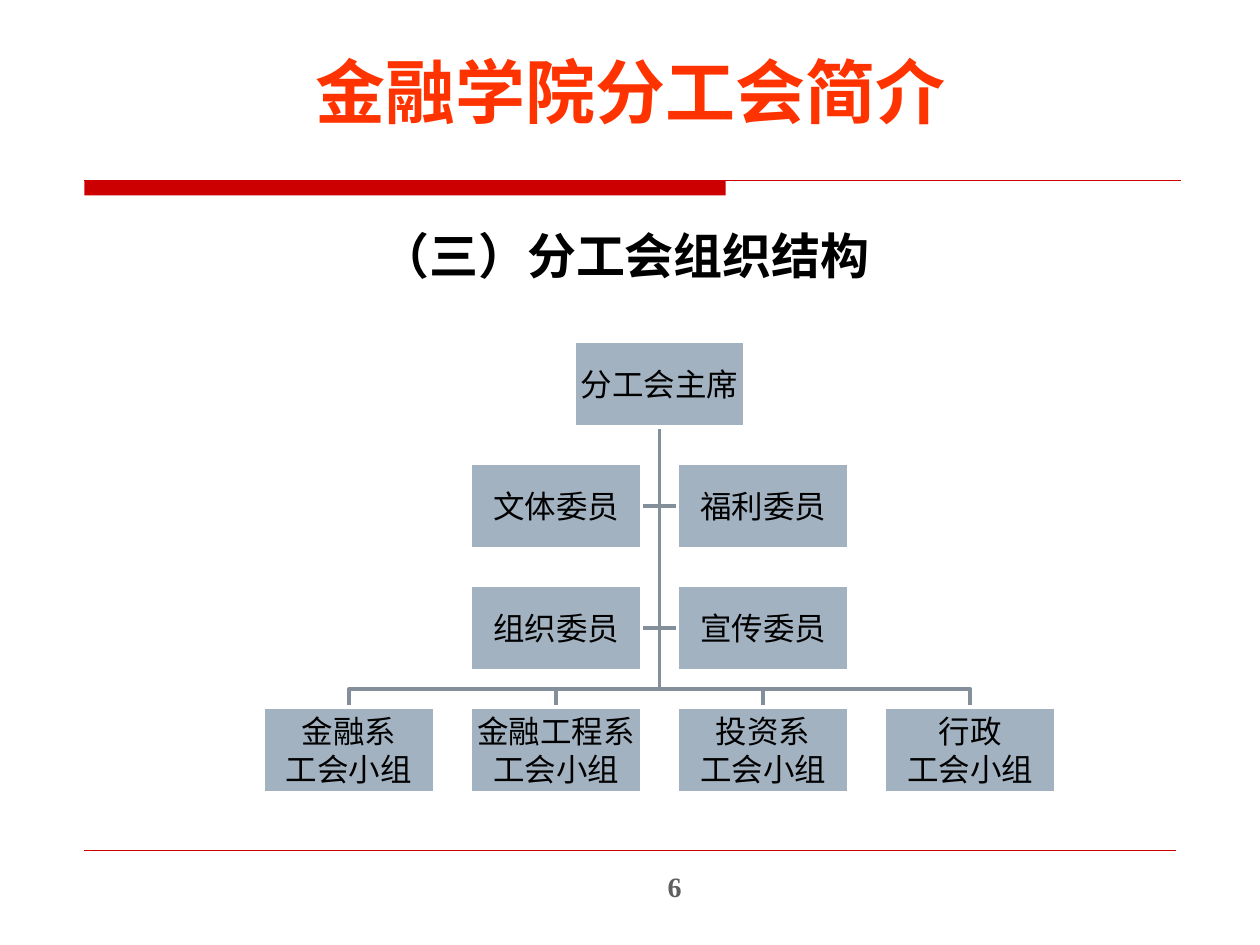
from lxml.etree import SubElement
from pptx import Presentation
from pptx.dml.color import RGBColor
from pptx.enum.shapes import MSO_CONNECTOR as Link, MSO_SHAPE as Shape
from pptx.enum.text import MSO_ANCHOR as Anchor, MSO_AUTO_SIZE as Fit, PP_ALIGN as Align
from pptx.oxml.ns import qn
from pptx.util import Inches, Pt

COLORS = {
    "title": "FF3300", "text": "000000", "accent": "CC0000",
    "node": "A3B2C1", "edge": "FFFFFF", "link": "838F9B", "number": "5F5F5F",
}
COMMITTEE = [["文体委员", "福利委员"], ["组织委员", "宣传委员"]]
GROUPS = ["金融系", "金融工程系", "投资系", "行政"]


def color(name):
    return RGBColor.from_string(COLORS[name])


def place(shape, box):
    for side, value in zip(("left", "top", "width", "height"), box):
        setattr(shape, side, Inches(value))


def write(shape, lines, size, font, ink, bold=False, margins=(0.1, 0.05), anchor=Anchor.MIDDLE):
    frame = shape.text_frame
    across, down = (Inches(margin) for margin in margins)
    frame_format = {
        "word_wrap": True, "auto_size": Fit.NONE, "vertical_anchor": anchor,
        "margin_left": across, "margin_right": across,
        "margin_top": down, "margin_bottom": down,
    }
    for name, value in frame_format.items():
        setattr(frame, name, value)
    for index, line in enumerate(lines):
        para = frame.add_paragraph() if index else frame.paragraphs[0]
        para.alignment = Align.CENTER
        para.space_before = Pt(0)
        span = para.add_run()
        span.text = line
        span.font.color.rgb = color(ink)
        for name, value in {"size": Pt(size), "name": font, "bold": bold}.items():
            setattr(span.font, name, value)
        SubElement(span.font._element, qn("a:ea")).set("typeface", font)


def add_line(page, start, end, ink, weight):
    line = page.shapes.add_connector(Link.STRAIGHT, *(Inches(value) for value in (*start, *end)))
    line.line.color.rgb = color(ink)
    line.line.width = Pt(weight)
    SubElement(line._element.spPr, qn("a:effectLst"))


def add_route(page, points):
    start, *rest = [(Inches(x), Inches(y)) for x, y in points]
    builder = page.shapes.build_freeform(*start)
    builder.add_line_segments(rest, close=False)
    route = builder.convert_to_shape()
    route.shadow.inherit = False
    route.fill.background()
    route.line.color.rgb = color("link")
    route.line.width = Pt(2)


def add_rectangle(page, box, fill):
    shape = page.shapes.add_shape(Shape.RECTANGLE, *(Inches(value) for value in box))
    shape.shadow.inherit = False
    shape.fill.solid()
    shape.fill.fore_color.rgb = color(fill)
    return shape


def add_header(page, box):
    left, top, width, height = box
    bar = add_rectangle(page, (left, top, 5.09, height), "accent")
    bar.line.fill.background()
    add_line(page, (left, top), (left + width, top), "accent", 0.75)


def add_title(page, box):
    title = page.shapes.title
    place(title, box)
    write(title, ["金融学院分工会简介"], 40, "Arial", "title", True, (0.1, 0))


def add_subtitle(page, box):
    body = page.placeholders[1]
    place(body, box)
    write(body, ["（三）分工会组织结构"], 28, "Noto Sans CJK SC", "text", True, anchor=Anchor.TOP)
    para = body.text_frame.paragraphs[0]
    para.line_spacing = 1.25
    settings = para._p.get_or_add_pPr()
    settings.set("marL", str(Inches(0.62)))
    settings.set("indent", str(Inches(-0.62)))
    SubElement(settings, qn("a:buNone"))


def add_node(page, box, lines):
    node = add_rectangle(page, box, "node")
    node.line.color.rgb = color("edge")
    node.line.width = Pt(2)
    write(node, lines, 18, "DejaVu Sans", "text", margins=(0.01, 0.01))


def add_organization(page, box):
    left, top, width, height = box
    node_width, node_height = 1.36, 0.68
    column_step = (width - node_width) / 3
    row_step = (height - node_height) / 3
    center = left + width / 2
    columns = [left + column_step * index for index in range(4)]
    rows = [top + row_step * index for index in range(4)]
    bus = rows[3] - (row_step - node_height) / 2
    start = (center, top + node_height)

    # Routes from the chair to the committee and the groups
    for row in rows[2:0:-1]:
        middle = row + node_height / 2
        for side in (columns[2], columns[1] + node_width):
            add_route(page, [start, (center, middle), (side, middle)])
    for column in reversed(columns):
        middle = column + node_width / 2
        add_route(page, [start, (center, bus), (middle, bus), (middle, rows[3])])

    # Chair
    add_node(page, (center - node_width / 2, top, node_width, node_height), ["分工会主席"])

    # Groups
    for column, name in zip(columns, GROUPS):
        add_node(page, (column, rows[3], node_width, node_height), [name, "工会小组"])

    # Committee pairs, one on each side of the trunk
    for row, names in zip(rows[1:3], COMMITTEE):
        for column, name in zip(columns[1:3], names):
            add_node(page, (column, row, node_width, node_height), [name])


def add_footer(page, box):
    left, top, width, height = box
    add_line(page, (left, top), (left + width, top), "accent", 0.25)
    number = page.shapes.add_textbox(0, 0, 0, 0)
    place(number, (3.74, top + 0.1, 3.23, height - 0.1))
    write(number, ["6"], 16, "Times New Roman", "number", True, (0, 0.05), Anchor.TOP)


def main():
    deck = Presentation()
    deck.slide_width, deck.slide_height = Inches(10), Inches(7.5)
    page = deck.slides.add_slide(deck.slide_layouts[1])
    add_header(page, (0.67, 1.43, 8.7, 0.12))
    add_footer(page, (0.67, 6.75, 8.66, 0.47))
    add_title(page, (0.63, 0.05, 8.75, 1.33))
    add_subtitle(page, (0.59, 1.62, 8.74, 0.71))
    add_organization(page, (2.09, 2.71, 6.29, 3.58))
    deck.save("out.pptx")


if __name__ == "__main__":
    main()
